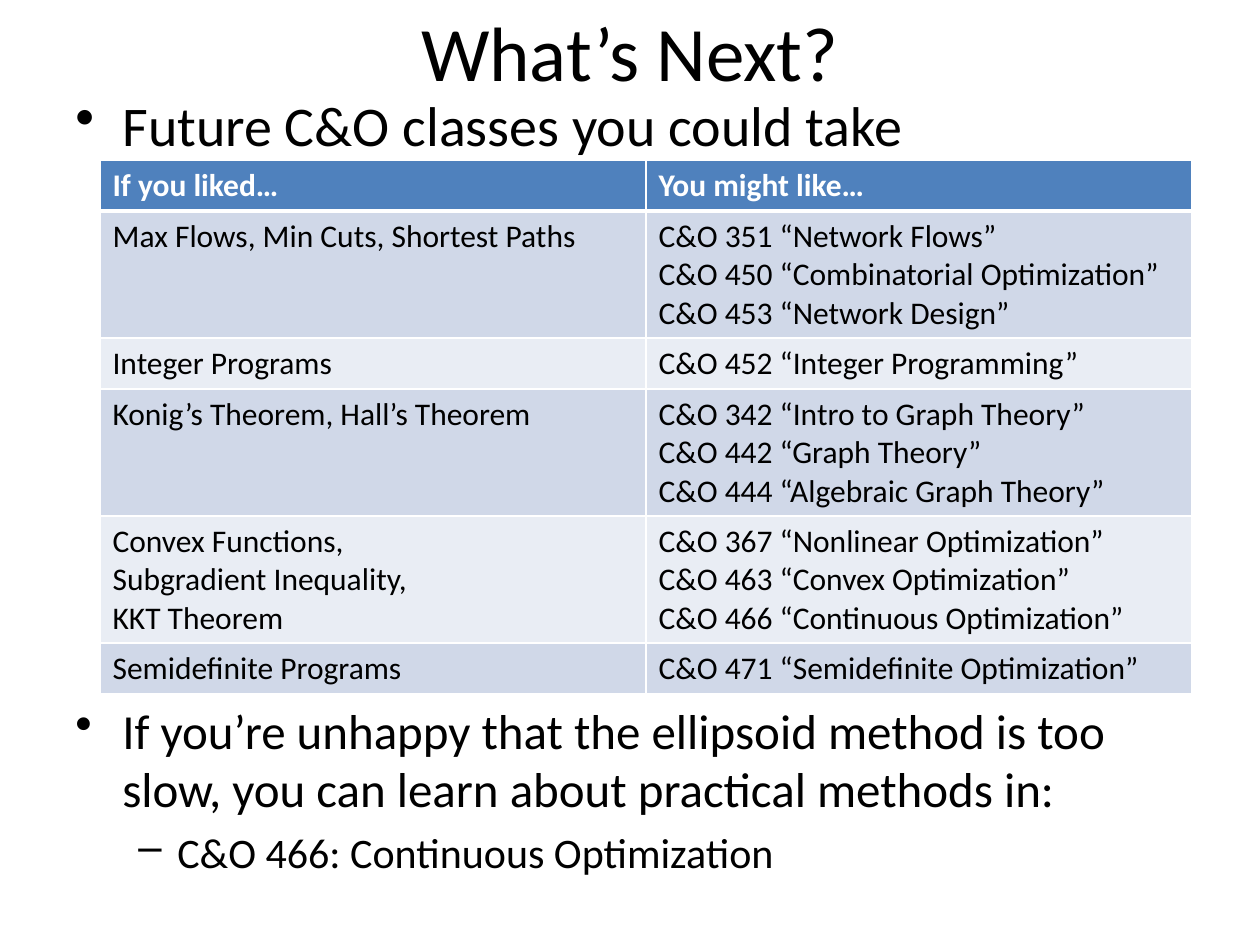
from pptx import Presentation
from pptx.dml.color import RGBColor
from pptx.enum.text import MSO_ANCHOR as Anchor, PP_ALIGN as Align
from pptx.oxml.ns import qn
from pptx.util import Emu, Pt
from lxml.etree import SubElement

PX = 914400 / 126
FONT = "Calibri"
BLACK, WHITE, HEADER = "000000", "FFFFFF", "4F81BD"
BANDS = ("D0D8E8", "E9EDF4")

TITLE = "What’s Next?"
INTRO = [("•", "Future C&O classes you could take", 32, 47, 47)]
CLOSING = [
    ("•", "If you’re unhappy that the ellipsoid method is too slow, "
          "you can learn about practical methods in:", 28, 47, 47),
    ("–", "C&O 466: Continuous Optimization", 24, 102, 39),
]
COURSES = [
    (["If you liked…"], ["You might like…"]),
    (["Max Flows, Min Cuts, Shortest Paths"],
     ["C&O 351 “Network Flows”", "C&O 450 “Combinatorial Optimization”",
      "C&O 453 “Network Design”"]),
    (["Integer Programs"], ["C&O 452 “Integer Programming”"]),
    (["Konig’s Theorem, Hall’s Theorem"],
     ["C&O 342 “Intro to Graph Theory”", "C&O 442 “Graph Theory”",
      "C&O 444 “Algebraic Graph Theory”"]),
    (["Convex Functions,", "Subgradient Inequality,", "KKT Theorem"],
     ["C&O 367 “Nonlinear Optimization”", "C&O 463 “Convex Optimization”",
      "C&O 466 “Continuous Optimization”"]),
    (["Semidefinite Programs"], ["C&O 471 “Semidefinite Optimization”"]),
]


def px(value):
    return Emu(round(value * PX))


def color(code):
    return RGBColor.from_string(code)


def set_font(para, size, code=BLACK, bold=False):
    font = para.font
    font.name, font.size, font.bold = FONT, Pt(size), bold
    font.color.rgb = color(code)


def add_text_box(page, left, top, width, height):
    frame = page.shapes.add_textbox(*map(px, (left, top, width, height))).text_frame
    frame.word_wrap = True
    return frame


def add_bullets(page, top, height, items):
    frame = add_text_box(page, 63, top, 1134, height)
    for index, (bullet, text, size, margin, hanging) in enumerate(items):
        para = frame.add_paragraph() if index else frame.paragraphs[0]
        para.text = text
        para.space_before = Pt(size * 0.2) if index else Pt(0)
        set_font(para, size)
        props = para._p.get_or_add_pPr()
        props.set("marL", str(px(margin)))
        props.set("indent", str(-px(hanging)))
        mark = SubElement(props, qn("a:buChar"), char=bullet)
        props.find(qn("a:defRPr")).addprevious(mark)


def add_borders(cell, bottom):
    props = cell._tc.get_or_add_tcPr()
    for index, (side, width) in enumerate((("L", 1), ("R", 1), ("T", 1), ("B", bottom))):
        line = SubElement(props, qn(f"a:ln{side}"), w=str(Pt(width)))
        fill = SubElement(line, qn("a:solidFill"))
        SubElement(fill, qn("a:srgbClr"), val=WHITE)
        props.insert(index, line)


def add_courses(page):
    heights = [13 + 38 * max(map(len, row)) for row in COURSES]
    frame = page.shapes.add_table(len(COURSES), 2, px(100), px(160), px(1092), px(sum(heights)))
    table = frame.table
    table.horz_banding = False
    for row, (texts, height) in enumerate(zip(COURSES, heights)):
        table.rows[row].height = px(height)
        for column, lines in enumerate(texts):
            cell = table.cell(row, column)
            cell.text = "\n".join(lines)
            cell.fill.solid()
            cell.fill.fore_color.rgb = color(BANDS[(row - 1) % 2] if row else HEADER)
            for para in cell.text_frame.paragraphs:
                set_font(para, 18, BLACK if row else WHITE, not row)
            add_borders(cell, 1 if row else 3)


def main():
    """Build the slide of follow-up courses and save it."""
    deck = Presentation()
    deck.slide_width, deck.slide_height = px(1260), px(945)
    page = deck.slides.add_slide(deck.slide_layouts[6])
    title = add_text_box(page, 63, -13, 1134, 127)
    title.vertical_anchor = Anchor.MIDDLE
    para = title.paragraphs[0]
    para.text, para.alignment = TITLE, Align.CENTER
    set_font(para, 44)
    add_bullets(page, 84, 76, INTRO)
    add_courses(page)
    add_bullets(page, 694, 200, CLOSING)
    deck.save("out.pptx")


if __name__ == "__main__":
    main()
